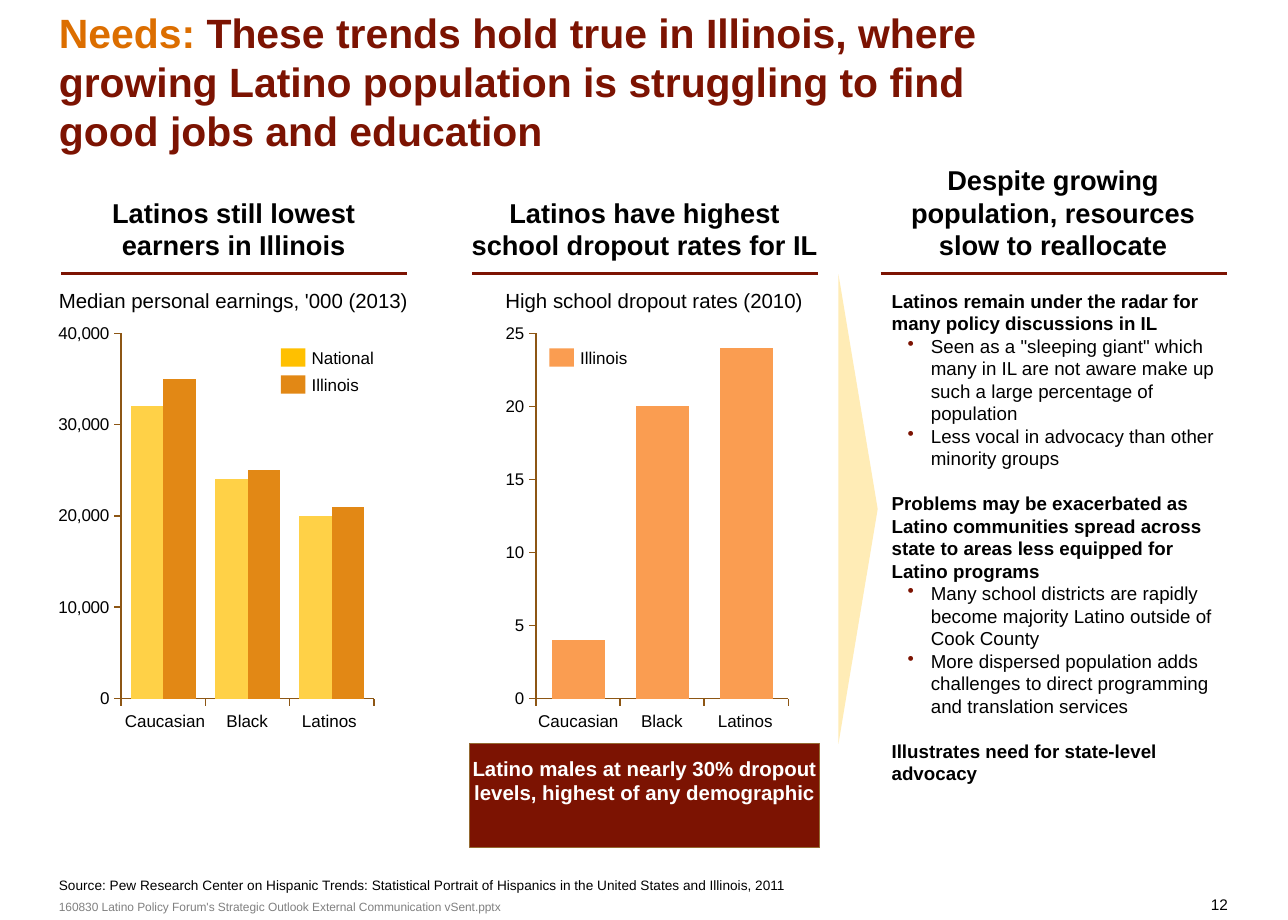
from dataclasses import dataclass
from lxml import etree
from pptx import Presentation
from pptx.chart.data import CategoryChartData
from pptx.dml.color import RGBColor
from pptx.enum.chart import XL_CHART_TYPE, XL_TICK_LABEL_POSITION, XL_TICK_MARK
from pptx.enum.shapes import MSO_CONNECTOR, MSO_SHAPE
from pptx.enum.text import MSO_ANCHOR, MSO_AUTO_SIZE, PP_ALIGN
from pptx.oxml.ns import qn
from pptx.util import Inches, Pt

LEFT, MID, RIGHT = PP_ALIGN.LEFT, PP_ALIGN.CENTER, PP_ALIGN.RIGHT
TOP, CENTER, BASE = MSO_ANCHOR.TOP, MSO_ANCHOR.MIDDLE, MSO_ANCHOR.BOTTOM
FIXED = MSO_AUTO_SIZE.NONE
RECT, WEDGE = MSO_SHAPE.RECTANGLE, MSO_SHAPE.ISOSCELES_TRIANGLE
COLUMN, LINE = XL_CHART_TYPE.COLUMN_CLUSTERED, MSO_CONNECTOR.STRAIGHT
OUT, NONE = XL_TICK_MARK.OUTSIDE, XL_TICK_MARK.NONE
HIDE = XL_TICK_LABEL_POSITION.NONE
FONT, BLACK, WHITE, WINE = "Arial", "000000", "FFFFFF", "7C1302"
AMBER, BROWN = "DC6E00", "8D5614"

Box = tuple[float, float, float, float]


@dataclass
class Head:
    left: float
    top: float
    text: str
    pad: float = 0


@dataclass
class Series:
    values: list[int]
    color: str


@dataclass
class Key:
    top: float
    name: str
    color: str


@dataclass
class Panel:
    box: Box
    plot: Box
    peak: int
    step: int
    size: float
    series: list[Series]
    title: str
    title_box: Box
    names: list[tuple[str, float, float]]
    key_left: float
    keys: list[Key]


@dataclass
class Note:
    text: str
    bullet: bool = False
    gap: float = 0


HEADS = [
    Head(0.48, 1.49, "Latinos still lowest earners in Illinois", 0.1),
    Head(3.83, 1.49, "Latinos have highest school dropout rates for IL"),
    Head(7.16, 1.22, "Despite growing population, resources slow to reallocate"),
]
PANELS = [
    Panel((0.39, 2.47, 2.71, 3.4), (0.221, 0.073, 0.76, 0.876), 40000, 10000, 10,
          [Series([32000, 24000, 20000], "FFD147"), Series([35000, 25000, 21000], "E28815")],
          "Median personal earnings, '000 (2013)", (0.48, 2.35, 2.83, 0.2),
          [("Caucasian", 1.01, 0.67), ("Black", 1.84, 0.35), ("Latinos", 2.41, 0.55)],
          2.29, [Key(2.84, "National", "FFC000"), Key(3.06, "Illinois", "E28815")]),
    Panel((4.01, 2.47, 2.43, 3.4), (0.149, 0.073, 0.846, 0.876), 25, 5, 9.9,
          [Series([4, 20, 24], "FA9D51")],
          "High school dropout rates (2010)", (4.12, 2.35, 2.42, 0.2),
          [("Caucasian", 4.38, 0.67), ("Black", 5.22, 0.35), ("Latinos", 5.8, 0.55)],
          4.48, [Key(2.84, "Illinois", "FA9D51")]),
]
NOTES = [
    Note("Latinos remain under the radar for many policy discussions in IL"),
    Note('Seen as a "sleeping giant" which many in IL are not aware make up '
         "such a large percentage of population", True),
    Note("Less vocal in advocacy than other minority groups", True),
    Note("Problems may be exacerbated as Latino communities spread across state "
         "to areas less equipped for Latino programs", gap=13.2),
    Note("Many school districts are rapidly become majority Latino outside of Cook County", True),
    Note("More dispersed population adds challenges to direct programming "
         "and translation services", True),
    Note("Illustrates need for state-level advocacy", gap=13.2),
]


def paint(item, color: str) -> None:
    if hasattr(item, "solid"):
        item.solid()
        item.fore_color.rgb = RGBColor.from_string(color)
    else:
        item.rgb = RGBColor.from_string(color)


def place(box: Box) -> list:
    return [Inches(v) for v in box]


def write(para, text: str, *, size: float, color: str = BLACK, bold: bool = False,
          align=LEFT) -> None:
    para.alignment = align
    run = para.add_run()
    run.text = text
    font = run.font
    font.name, font.size, font.bold = FONT, Pt(size), bold
    paint(font.color, color)


def frame(shape, *, anchor=TOP, wrap: bool = True, side: float = 0, edge: float = 0):
    body = shape.text_frame
    body.auto_size = FIXED
    body.word_wrap, body.vertical_anchor = wrap, anchor
    body.margin_left = body.margin_right = Inches(side)
    body.margin_top = body.margin_bottom = Inches(edge)
    return body


def label(slide, box: Box, text: str, *, anchor=TOP, wrap: bool = False, **style):
    body = frame(slide.shapes.add_textbox(*place(box)), anchor=anchor, wrap=wrap)
    write(body.paragraphs[0], text, **style)
    return body


def block(slide, kind, box: Box, color: str):
    shape = slide.shapes.add_shape(kind, *place(box))
    shape.shadow.inherit = False
    paint(shape.fill, color)
    shape.line.fill.background()
    return shape


def add_head(slide, head: Head) -> None:
    base = 2.23
    shape = block(slide, RECT, (head.left, head.top, 2.85, base - head.top), WHITE)
    body = frame(shape, anchor=BASE, side=head.pad, edge=0.1)
    write(body.paragraphs[0], head.text, size=16, bold=True, align=MID)
    ends = (head.left + 0.02, base, head.left + 2.84, base)
    rule = slide.shapes.add_connector(LINE, *place(ends))
    etree.SubElement(rule.element.spPr, qn("a:effectLst"))
    paint(rule.line.fill, WINE)
    rule.line.width = Pt(2)


def set_plot(chart, plot: Box) -> None:
    area = chart.element.find(".//" + qn("c:plotArea"))
    for old in area.findall(qn("c:layout")):
        area.remove(old)
    layout = etree.Element(qn("c:layout"))
    area.insert(0, layout)
    manual = etree.SubElement(layout, qn("c:manualLayout"))
    parts = [("layoutTarget", "inner"), ("xMode", "edge"), ("yMode", "edge")]
    for name, value in parts + list(zip("xywh", plot)):
        etree.SubElement(manual, qn("c:" + name)).set("val", str(value))


def add_panel(slide, panel: Panel) -> None:
    data = CategoryChartData()
    data.categories = ["1", "2", "3"]
    for num, series in enumerate(panel.series, 1):
        data.add_series(f"Series {num}", series.values)
    chart = slide.shapes.add_chart(COLUMN, *place(panel.box), data).chart
    chart.has_legend = chart.has_title = False
    chart.font.name, chart.font.size = FONT, Pt(panel.size)
    paint(chart.font.color, BLACK)
    set_plot(chart, panel.plot)
    bars = chart.plots[0]
    bars.gap_width, bars.overlap, bars.vary_by_categories = 60, 0, False
    for bar, series in zip(bars.series, panel.series):
        paint(bar.format.fill, series.color)
    for axis in (chart.category_axis, chart.value_axis):
        axis.has_major_gridlines = False
        axis.major_tick_mark, axis.minor_tick_mark = OUT, NONE
        paint(axis.format.line.fill, BROWN)
        axis.format.line.width = Pt(1)
    chart.category_axis.tick_label_position = HIDE
    scale = chart.value_axis
    scale.minimum_scale, scale.maximum_scale, scale.major_unit = 0, panel.peak, panel.step
    scale.tick_labels.number_format = "#,##0"
    scale.tick_labels.number_format_is_linked = False
    label(slide, panel.title_box, panel.title, size=12, anchor=BASE)
    for name, left, width in panel.names:
        label(slide, (left, 5.79, width, 0.17), name, size=10, align=MID)
    for key in panel.keys:
        block(slide, RECT, (panel.key_left, key.top, 0.2, 0.15), key.color)
        spot = (panel.key_left + 0.25, key.top - 0.01, 0.51, 0.17)
        label(slide, spot, key.name, size=10, anchor=CENTER)


def add_notes(slide) -> None:
    box = slide.shapes.add_textbox(*place((7.17, 2.26, 2.85, 4.3)))
    body = frame(box, side=0.1, edge=0.1)
    for num, note in enumerate(NOTES):
        para = body.add_paragraph() if num else body.paragraphs[0]
        if note.gap:
            para.space_before = Pt(note.gap)
        if note.bullet:
            props = para._p.get_or_add_pPr()
            props.set("marL", str(Inches(0.32)))
            props.set("indent", str(Inches(-0.19)))
            tint = etree.SubElement(props, qn("a:buClr"))
            etree.SubElement(tint, qn("a:srgbClr")).set("val", WINE)
            etree.SubElement(props, qn("a:buChar")).set("char", "•")
        write(para, note.text, size=11, bold=not note.bullet)


def main() -> None:
    deck = Presentation()
    deck.slide_width, deck.slide_height = Inches(10.5), Inches(7.5)
    slide = deck.slides.add_slide(deck.slide_layouts[5])
    title = slide.shapes.title
    title.left, title.top, title.width, title.height = place((0.48, 0.4, 7.62, 0.91))
    para = frame(title, anchor=BASE, edge=0.05).paragraphs[0]
    write(para, "Needs: ", size=24, color=AMBER, bold=True)
    write(para, "These trends hold true in Illinois, where growing Latino population "
          "is struggling to find good jobs and education", size=24, color=WINE, bold=True)
    for head in HEADS:
        add_head(slide, head)
    for panel in PANELS:
        add_panel(slide, panel)
    block(slide, WEDGE, (5.08, 3.99, 3.83, 0.32), "FFECB6").rotation = 90
    call = block(slide, RECT, (3.83, 6.06, 2.85, 0.85), WINE)
    paint(call.line.fill, "946A32")
    call.line.width = Pt(0.75)
    write(frame(call, edge=0.1).paragraphs[0],
          "Latino males at nearly 30% dropout levels, highest of any demographic",
          size=12, color=WHITE, bold=True, align=MID)
    add_notes(slide)
    source = label(slide, (0.48, 6.92, 9.53, 0.36),
                   "Source: Pew Research Center on Hispanic Trends: Statistical Portrait of "
                   "Hispanics in the United States and Illinois, 2011",
                   size=8, anchor=BASE, wrap=True)
    source.paragraphs[0].line_spacing = 0.9
    label(slide, (0.48, 7.33, 4, 0.12),
          "160830 Latino Policy Forum's Strategic Outlook External Communication vSent.pptx",
          size=7, color="808080", anchor=CENTER, wrap=True)
    label(slide, (9.81, 7.3, 0.2, 0.14), "12", size=9, align=RIGHT)
    deck.save("out.pptx")


if __name__ == "__main__":
    main()
